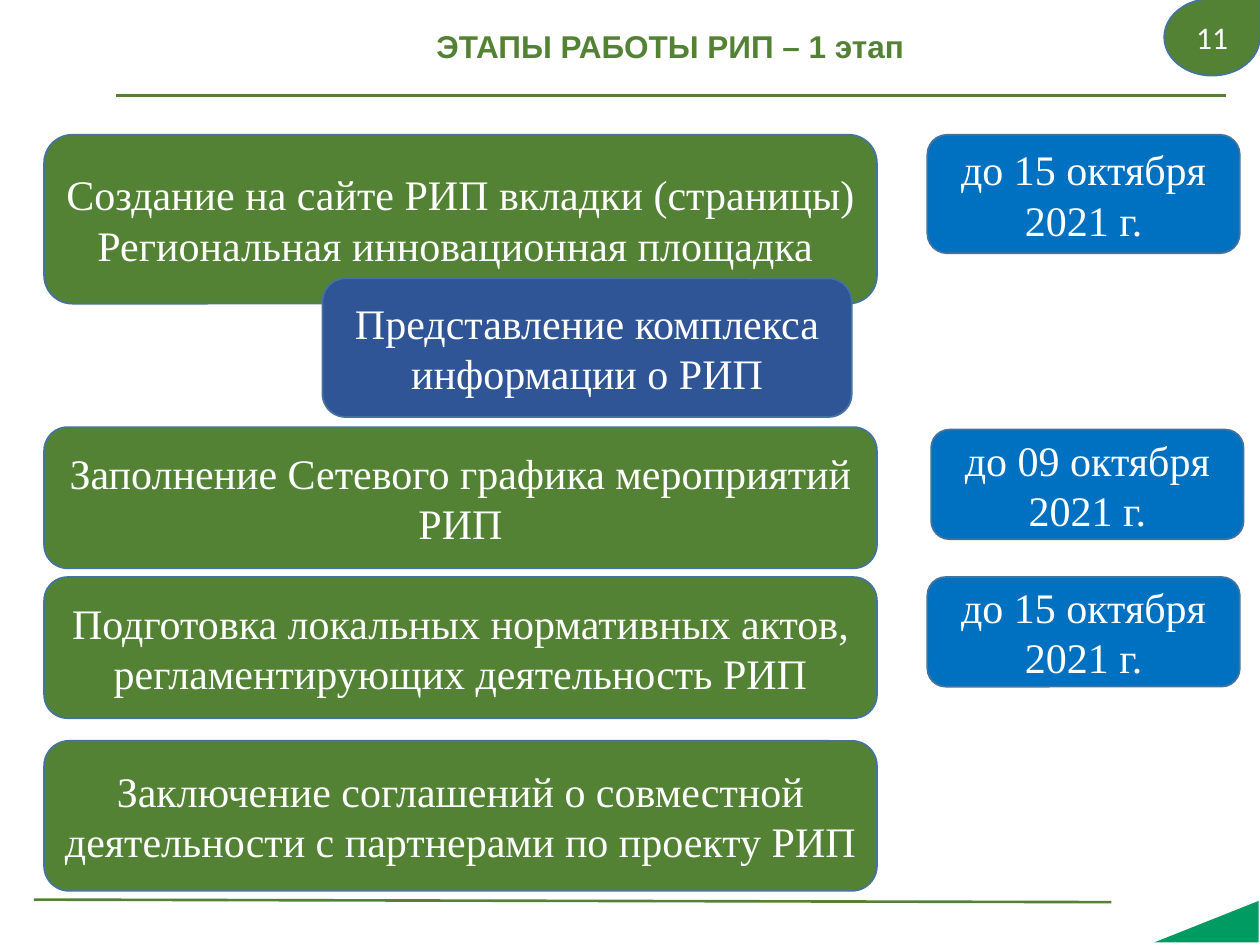
from lxml.etree import SubElement
from pptx import Presentation
from pptx.dml.color import RGBColor
from pptx.enum.shapes import MSO_CONNECTOR, MSO_SHAPE
from pptx.enum.text import MSO_ANCHOR, PP_ALIGN
from pptx.oxml.ns import qn
from pptx.util import Inches, Pt

GREEN, BLUE, NAVY = "548235", "0070C0", "2F5597"
EDGE, WHITE, LEAF = "43739E", "FFFFFF", "009B62"
SERIF = "Times New Roman"

TITLE = "ЭТАПЫ РАБОТЫ РИП – 1 этап"
PAGE = "11"
RULES = [(0.92, 0.76, 9.73, 0.76), (0.27, 7.14, 8.82, 7.16)]
STEPS = [
    (1.07, 1.34, "Создание на сайте РИП вкладки (страницы) \n"
                 "Региональная инновационная площадка "),
    (3.39, 1.12, "Заполнение Сетевого графика мероприятий РИП"),
    (4.58, 1.12, "Подготовка локальных нормативных актов,\n"
                 "регламентирующих деятельность РИП"),
    (5.88, 1.19, "Заключение соглашений о совместной деятельности "
                 "с партнерами по проекту РИП"),
]
DATES = [
    (7.36, 1.07, 0.94, "до 15 октября 2021 г."),
    (7.39, 3.41, 0.87, "до 09 октября 2021 г."),
    (7.36, 4.58, 0.87, "до 15 октября 2021 г."),
]
DETAIL = "Представление комплекса информации о РИП"


def color(code):
    return RGBColor.from_string(code)


def write(shape, text, font, size, code, bold=False):
    frame = shape.text_frame
    frame.text = text
    frame.word_wrap = True
    frame.vertical_anchor = MSO_ANCHOR.MIDDLE
    for para in frame.paragraphs:
        para.alignment = PP_ALIGN.CENTER
        for run in para.runs:
            run.font.name = font
            run.font.size = Pt(size)
            run.font.bold = bold
            run.font.color.rgb = color(code)


def draw(slide, kind, box, fill, edge=None):
    shape = slide.shapes.add_shape(kind, *map(Inches, box))
    shape.shadow.inherit = False
    shape.fill.solid()
    shape.fill.fore_color.rgb = color(fill)
    if edge:
        shape.line.color.rgb = color(edge)
        shape.line.width = Pt(1)
    else:
        shape.line.fill.background()
    return shape


def card(slide, box, fill, text):
    shape = draw(slide, MSO_SHAPE.ROUNDED_RECTANGLE, box, fill, EDGE)
    write(shape, text, SERIF, 24, WHITE)


def rule(slide, ends):
    line = slide.shapes.add_connector(MSO_CONNECTOR.STRAIGHT, *map(Inches, ends))
    line.line.color.rgb = color(GREEN)
    line.line.width = Pt(1.5)
    SubElement(line._element.spPr, qn("a:effectLst"))


def main():
    """Build the slide on the stages of work."""
    deck = Presentation()
    deck.slide_width, deck.slide_height = Inches(10), Inches(7.5)
    slide = deck.slides.add_slide(deck.slide_layouts[5])

    for ends in RULES:
        rule(slide, ends)
    corner = draw(slide, MSO_SHAPE.RIGHT_TRIANGLE, (9.41, 6.9, 0.33, 0.83), LEAF)
    corner.rotation = 270

    title = slide.shapes.title
    title.left, title.top, title.width, title.height = map(
        Inches, (0.8, 0.05, 9.04, 0.67))
    write(title, TITLE, "Arial", 18, GREEN, True)
    title.text_frame.paragraphs[0].line_spacing = 0.9

    for top, height, text in STEPS:
        card(slide, (0.35, top, 6.61, height), GREEN, text)
    for left, top, height, text in DATES:
        card(slide, (left, top, 2.48, height), BLUE, text)
    card(slide, (2.56, 2.21, 4.2, 1.1), NAVY, DETAIL)

    badge = draw(slide, MSO_SHAPE.TEAR, (9.24, -0.01, 0.76, 0.61), GREEN, EDGE)
    write(badge, PAGE, "Calibri", 18, WHITE)

    deck.save("out.pptx")


if __name__ == "__main__":
    main()
